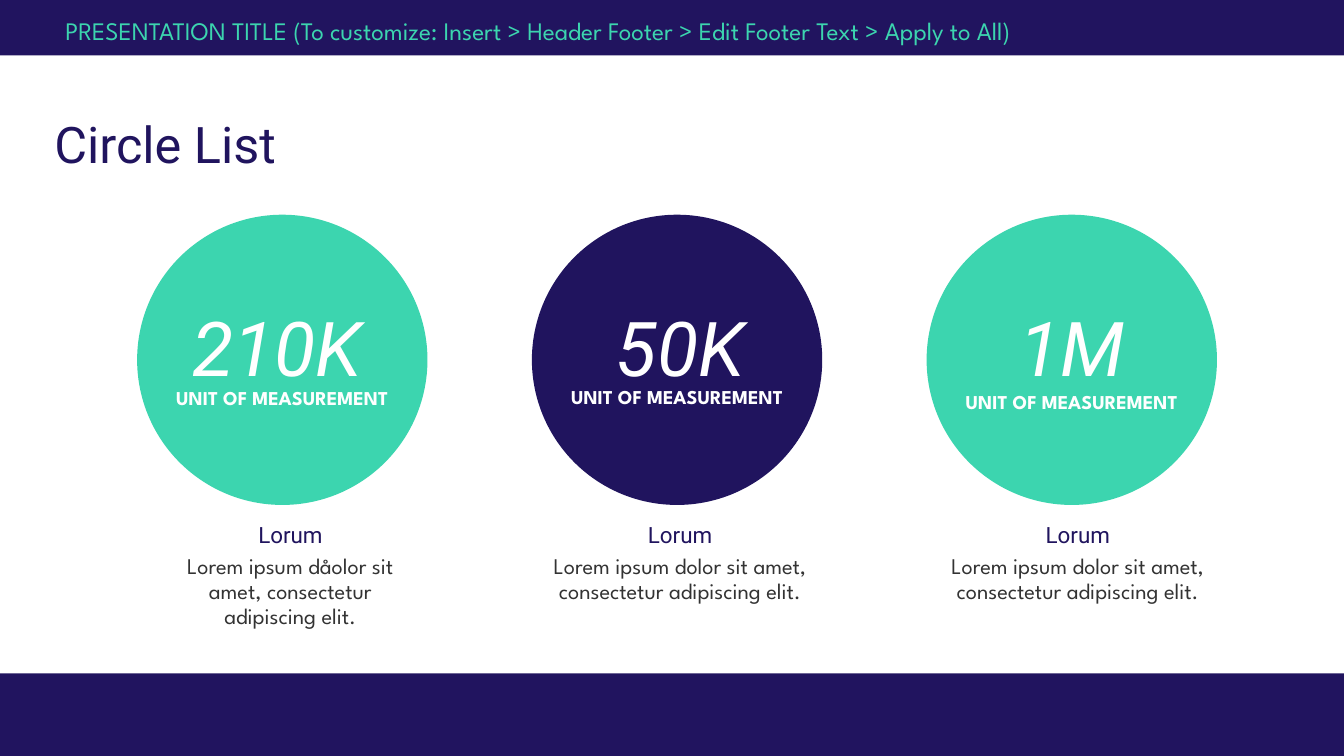
"""Build the Circle List slide: three headline figures in circles with captions."""
import pptx
import pptx.dml.color
import pptx.enum.shapes
import pptx.enum.text
import pptx.util

NAVY = pptx.dml.color.RGBColor(0x20, 0x14, 0x5E)
BAR_NAVY = pptx.dml.color.RGBColor(0x21, 0x14, 0x5F)
TEAL = pptx.dml.color.RGBColor(0x3C, 0xD5, 0xAF)
WHITE = pptx.dml.color.RGBColor(0xFF, 0xFF, 0xFF)
GREY = pptx.dml.color.RGBColor(0x33, 0x33, 0x33)
DISPLAY, BODY = "Roboto", "League Spartan"
CENTER = pptx.enum.text.PP_ALIGN.CENTER
WIDTH, HEIGHT = 13.33, 7.5
FIRST_CENTER, PITCH = 2.8, 3.915
DIAMETER, CIRCLE_TOP = 2.88, 2.13

deck = pptx.Presentation()
deck.slide_width = pptx.util.Inches(WIDTH)
deck.slide_height = pptx.util.Inches(HEIGHT)
slide = deck.slides.add_slide(deck.slide_layouts[5])


def add_filled(preset, left, top, width, height, color):
    """Draw a plain filled shape."""
    shape = slide.shapes.add_shape(preset, *map(pptx.util.Inches, (left, top, width, height)))
    shape.shadow.inherit = False
    shape.fill.solid()
    shape.fill.fore_color.rgb = color
    shape.line.fill.background()


def add_label(box, text, size, font, color, align=None, wrap=True):
    """Write one styled run into a text box given as left, top, width, height."""
    frame = slide.shapes.add_textbox(*map(pptx.util.Inches, box)).text_frame
    frame.word_wrap = wrap
    paragraph = frame.paragraphs[0]
    paragraph.alignment = align
    run = paragraph.add_run()
    run.text = text
    run.font.size = pptx.util.Pt(size)
    run.font.name = font
    run.font.color.rgb = color
    return frame, run


BAR = pptx.enum.shapes.MSO_SHAPE.RECTANGLE
add_filled(BAR, 0, 0, WIDTH, 0.55, BAR_NAVY)
add_filled(BAR, 0, HEIGHT - 0.82, WIDTH, 0.82, BAR_NAVY)
add_label(
    (0.55, 0.1, 11.56, 0.4),
    "PRESENTATION TITLE (To customize: Insert > Header Footer > Edit Footer Text > Apply to All)",
    18, BODY, TEAL,
)

title = slide.shapes.title
title.left, title.top = pptx.util.Inches(0.54), pptx.util.Inches(1.19)
title.width, title.height = pptx.util.Inches(11.04), pptx.util.Inches(1.09)
title_frame = title.text_frame
title_frame.margin_left = title_frame.margin_right = 0
title_frame.margin_top = title_frame.margin_bottom = 0
title_frame.vertical_anchor = pptx.enum.text.MSO_ANCHOR.TOP
title_line = title_frame.paragraphs[0]
title_line.alignment = pptx.enum.text.PP_ALIGN.LEFT
title_line.line_spacing = 0.9
title_run = title_line.add_run()
title_run.text = "Circle List"
title_run.font.size = pptx.util.Pt(36)
title_run.font.name = DISPLAY
title_run.font.color.rgb = NAVY

figures = [
    ("210K", TEAL, -0.05, 3.78, 0.08, "Lorem ipsum dåolor sit amet, consectetur adipiscing elit."),
    ("50K", NAVY, 0.03, 3.77, 0.03, "Lorem ipsum dolor sit amet, consectetur adipiscing elit."),
    ("1M", TEAL, 0, 3.82, 0.06, "Lorem ipsum dolor sit amet, consectetur adipiscing elit."),
]
for column, (value, color, value_shift, unit_top, caption_shift, detail) in enumerate(figures):
    center = FIRST_CENTER + column * PITCH
    add_filled(pptx.enum.shapes.MSO_SHAPE.OVAL, center - DIAMETER / 2, CIRCLE_TOP,
               DIAMETER, DIAMETER, color)

    value_left = center + value_shift - 2.28 / 2
    _, value_run = add_label((value_left, 2.94, 2.28, 1.01), value, 54, DISPLAY, WHITE, CENTER)
    value_run.font.italic = True

    _, unit_run = add_label((center - 2.35 / 2, unit_top, 2.35, 0.34), "UNIT OF MEASUREMENT",
                            14, BODY, WHITE, CENTER, wrap=False)
    unit_run.font.bold = True

    caption_center = center + caption_shift
    add_label((caption_center - 2.28 / 2, 5.12, 2.28, 0.37), "Lorum", 16, DISPLAY, NAVY, CENTER)
    detail_frame, _ = add_label((caption_center - 2.54 / 2, 5.44, 2.54, 0.86), detail,
                                16, BODY, GREY, CENTER)
    detail_frame.margin_left = detail_frame.margin_right = 0
    detail_frame.paragraphs[0].line_spacing = pptx.util.Pt(18)

deck.save("out.pptx")
